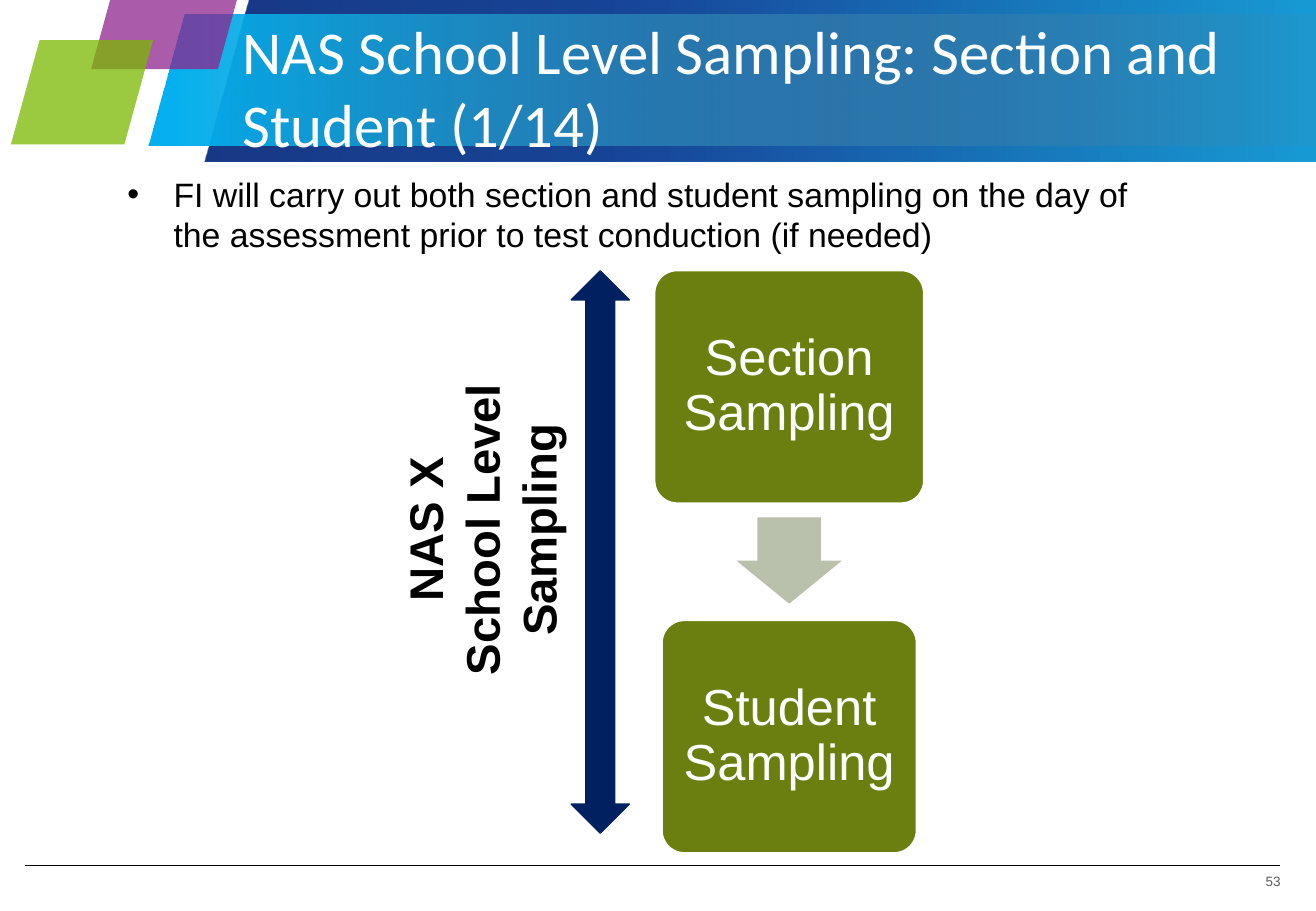
import dataclasses
import typing

import lxml.etree
import pptx
import pptx.dml.color
import pptx.enum.shapes
import pptx.enum.text
import pptx.oxml.ns
import pptx.util

RGB = pptx.dml.color.RGBColor
SHAPE = pptx.enum.shapes.MSO_SHAPE
ALIGN = pptx.enum.text.PP_ALIGN
ANCHOR = pptx.enum.text.MSO_ANCHOR
qn = pptx.oxml.ns.qn

PX = 9144  # EMU per px, 100 px to the inch

WHITE = RGB(0xFF, 0xFF, 0xFF)
BLACK = RGB(0x00, 0x00, 0x00)
GREY = RGB(0x59, 0x59, 0x59)
MIDGREY = RGB(0x7A, 0x7A, 0x7A)
DARK_BLUE = RGB(0x00, 0x25, 0x7A)
BLUE = RGB(0x00, 0x33, 0x8D)
LIGHT_BLUE = RGB(0x00, 0x9F, 0xDA)
CYAN = RGB(0x00, 0xB0, 0xF0)
PURPLE = RGB(0x8E, 0x25, 0x8D)
LIME = RGB(0x7A, 0xB8, 0x00)
OLIVE = RGB(0x6A, 0x7F, 0x10)
SAGE = RGB(0xB9, 0xC0, 0xAB)
NAVY = RGB(0x00, 0x20, 0x60)


@dataclasses.dataclass(frozen=True)
class Box:
    left: int
    top: int
    width: int
    height: int

    def emu(self) -> tuple[int, ...]:
        return tuple(v * PX for v in dataclasses.astuple(self))


@dataclasses.dataclass(frozen=True)
class Stop:
    """A gradient stop; position and opacity are percentages."""
    pos: int
    color: RGB
    opacity: int = 100


@dataclasses.dataclass(frozen=True)
class Slant:
    """A header parallelogram; a single stop means a solid fill."""
    box: Box
    stops: tuple[Stop, ...]


@dataclasses.dataclass(frozen=True)
class Step:
    text: str
    box: Box


HEADER_BANDS = (
    Slant(Box(168, -1, 998, 134),
          (Stop(0, DARK_BLUE, 90), Stop(35, BLUE, 90), Stop(100, LIGHT_BLUE, 90))),
    Slant(Box(122, 12, 1020, 108), (Stop(0, CYAN), Stop(100, MIDGREY, 0))),
    Slant(Box(75, -58, 136, 115), (Stop(0, PURPLE, 75),)),
    Slant(Box(9, 33, 117, 86), (Stop(0, LIME, 75),)),
)
STEPS = (
    Step("Section Sampling", Box(538, 222, 223, 193)),
    Step("Student Sampling", Box(544, 510, 211, 193)),
)


def add_alpha(clr: typing.Any, opacity: int) -> None:
    lxml.etree.SubElement(clr, qn("a:alpha")).set("val", str(opacity * 1000))


def add_shape(s: typing.Any, kind: SHAPE, box: Box, color: RGB, *adjustments: float) -> typing.Any:
    sp = s.shapes.add_shape(kind, *box.emu())
    sp.shadow.inherit = False
    sp.fill.solid()
    sp.fill.fore_color.rgb = color
    sp.line.fill.background()
    for i, value in enumerate(adjustments):
        sp.adjustments[i] = value
    return sp


def add_slant(s: typing.Any, slant: Slant) -> None:
    first = slant.stops[0]
    sp = add_shape(s, SHAPE.PARALLELOGRAM, slant.box, first.color, 0.275)
    if len(slant.stops) == 1:
        add_alpha(sp._element.spPr.find(".//" + qn("a:srgbClr")), first.opacity)
        return
    sp.fill.gradient()
    sp.fill.gradient_angle = 0
    stops = sp._element.spPr.find(".//" + qn("a:gsLst"))
    for old in list(stops):
        stops.remove(old)
    for stop in slant.stops:
        gs = lxml.etree.SubElement(stops, qn("a:gs"))
        gs.set("pos", str(stop.pos * 1000))
        clr = lxml.etree.SubElement(gs, qn("a:srgbClr"))
        clr.set("val", str(stop.color))
        add_alpha(clr, stop.opacity)


def set_text(sp: typing.Any, text: str, size: int, color: RGB, font: str = "Arial",
             bold: bool = False, align: ALIGN = ALIGN.LEFT, anchor: ANCHOR = ANCHOR.TOP) -> typing.Any:
    tf = sp.text_frame
    tf.word_wrap = True
    tf.vertical_anchor = anchor
    tf.text = text
    for p in tf.paragraphs:
        p.alignment = align
        for r in p.runs:
            r.font.name = font
            r.font.size = pptx.util.Pt(size)
            r.font.bold = bold
            r.font.color.rgb = color
    return tf


def add_text(s: typing.Any, box: Box, *args: typing.Any, **kwargs: typing.Any) -> typing.Any:
    """Add a text box; further arguments go to set_text."""
    return set_text(s.shapes.add_textbox(*box.emu()), *args, **kwargs)


def add_footer(s: typing.Any) -> None:
    rule = s.shapes.add_connector(pptx.enum.shapes.MSO_CONNECTOR.STRAIGHT,
                                  21 * PX, 712 * PX, 1053 * PX, 712 * PX)
    rule.line.color.rgb = BLACK
    rule.line.width = pptx.util.Pt(0.25)
    lxml.etree.SubElement(rule._element.spPr, qn("a:effectLst"))
    tf = add_text(s, Box(994, 711, 60, 31), "53", 8, GREY, align=ALIGN.RIGHT)
    tf.margin_top = 8 * PX
    tf.margin_right = 0


def add_step(s: typing.Any, step: Step) -> None:
    sp = add_shape(s, SHAPE.ROUNDED_RECTANGLE, step.box, OLIVE, 0.1)
    sp.line.color.rgb = WHITE
    sp.line.width = pptx.util.Pt(2)
    tf = set_text(sp, step.text, 30, WHITE, align=ALIGN.CENTER, anchor=ANCHOR.MIDDLE)
    tf.paragraphs[0].line_spacing = 0.9


def add_bullet(p: typing.Any, indent: int) -> None:
    pPr = p._p.get_or_add_pPr()
    pPr.set("marL", str(indent * PX))
    pPr.set("indent", str(-indent * PX))
    lxml.etree.SubElement(pPr, qn("a:buFont")).set("typeface", "Arial")
    lxml.etree.SubElement(pPr, qn("a:buChar")).set("char", "•")


def main() -> None:
    prs = pptx.Presentation()
    prs.slide_width, prs.slide_height = 1083 * PX, 750 * PX
    s = prs.slides.add_slide(prs.slide_layouts[6])

    for slant in HEADER_BANDS:
        add_slant(s, slant)
    add_footer(s)
    add_text(s, Box(190, 28, 877, 87), "NAS School Level Sampling: Section and Student (1/14)",
             36, WHITE, font="Calibri", anchor=ANCHOR.MIDDLE)

    for step in STEPS:
        add_step(s, step)
    add_shape(s, SHAPE.DOWN_ARROW, Box(606, 426, 87, 71), SAGE, 0.6, 0.5)

    span = add_shape(s, SHAPE.UP_DOWN_ARROW, Box(470, 223, 48, 463), NAVY, 0.5, 0.5)
    span.line.color.rgb = NAVY
    span.line.width = pptx.util.Pt(0.75)

    tf = add_text(s, Box(321, 231, 107, 410), "NAS X\nSchool Level Sampling", 28, BLACK,
                  bold=True, align=ALIGN.CENTER)
    tf._txBody.bodyPr.set("vert", "vert270")

    tf = add_text(s, Box(95, 138, 865, 77),
                  "FI will carry out both section and student sampling on the day of "
                  "the assessment prior to test conduction (if needed)", 20, BLACK)
    add_bullet(tf.paragraphs[0], 38)

    prs.save("out.pptx")


if __name__ == "__main__":
    main()
